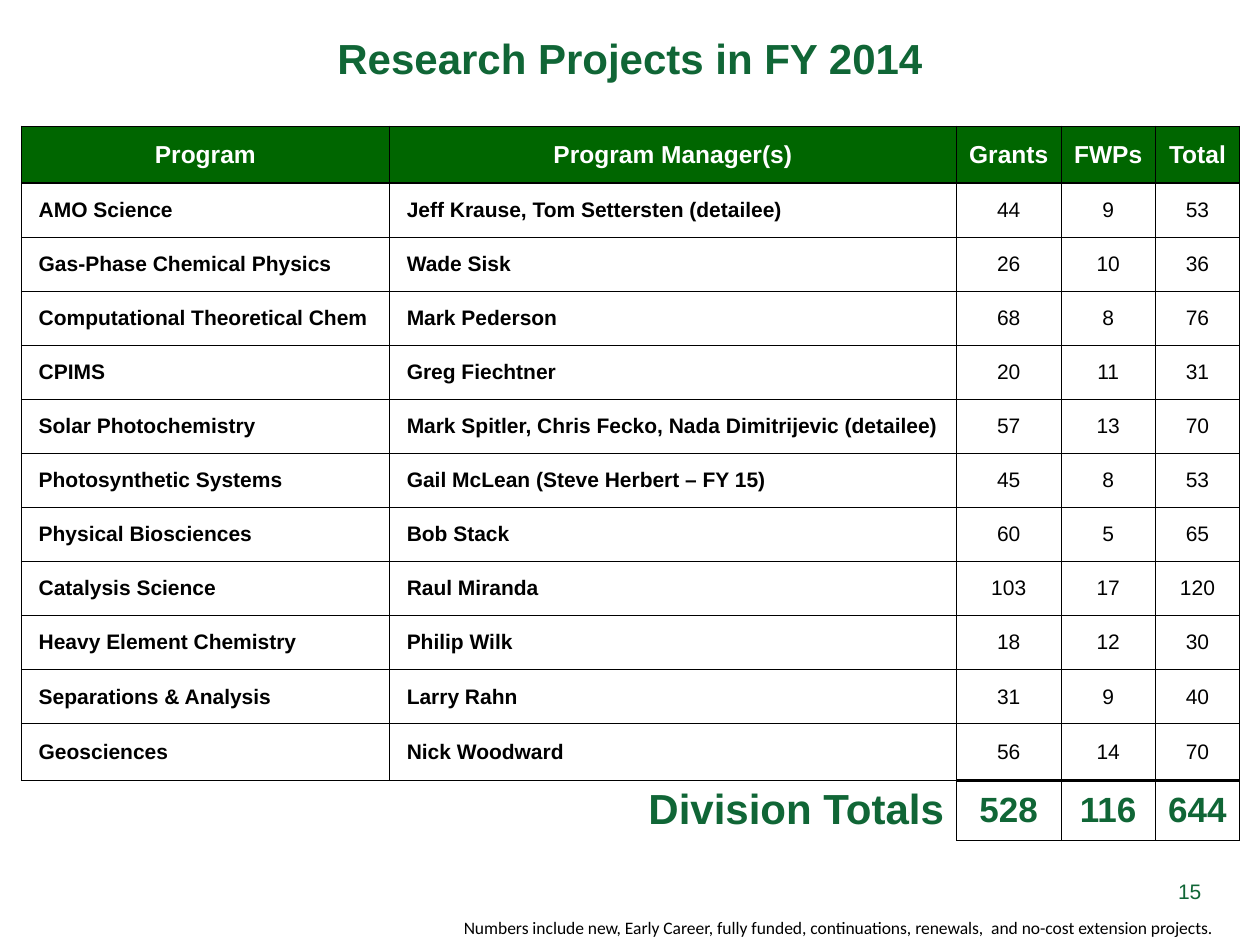
from lxml.etree import SubElement
from pptx import Presentation
from pptx.dml.color import RGBColor
from pptx.enum.text import MSO_ANCHOR as Anchor, MSO_AUTO_SIZE as AutoSize, PP_ALIGN as Align
from pptx.oxml.ns import qn
from pptx.util import Cm, Pt

COLORS = {"title": "106636", "header": "006600", "white": "FFFFFF", "black": "000000"}

HEADINGS = ["Program", "Program Manager(s)", "Grants", "FWPs", "Total"]
PROGRAMS = [
    ("AMO Science", "Jeff Krause, Tom Settersten (detailee)", 44, 9, 53),
    ("Gas-Phase Chemical Physics", "Wade Sisk", 26, 10, 36),
    ("Computational Theoretical Chem", "Mark Pederson", 68, 8, 76),
    ("CPIMS", "Greg Fiechtner", 20, 11, 31),
    ("Solar Photochemistry", "Mark Spitler, Chris Fecko, Nada Dimitrijevic (detailee)", 57, 13, 70),
    ("Photosynthetic Systems", "Gail McLean (Steve Herbert – FY 15)", 45, 8, 53),
    ("Physical Biosciences", "Bob Stack", 60, 5, 65),
    ("Catalysis Science", "Raul Miranda", 103, 17, 120),
    ("Heavy Element Chemistry", "Philip Wilk", 18, 12, 30),
    ("Separations & Analysis", "Larry Rahn", 31, 9, 40),
    ("Geosciences", "Nick Woodward", 56, 14, 70),
]
TOTALS = ("", "Division Totals", 528, 116, 644)

COLUMN_WIDTHS = [7.42, 11.43, 2.11, 1.9, 1.7]
ROW_HEIGHTS = [1.15] + [1.09] * (len(PROGRAMS) - 1) + [1.15, 1.17]


def set_font(para, size, color, bold=False, name="Arial"):
    font = para.font
    font.name, font.size, font.bold = name, Pt(size), bold
    font.color.rgb = RGBColor.from_string(COLORS[color])


def set_borders(cell, left=0.5, right=0.5, top=0.5, bottom=0.5):
    """Draw black cell edges of the given point widths; a width of 0 hides the edge."""
    properties = cell._tc.get_or_add_tcPr()
    for side, width in zip("LRTB", (left, right, top, bottom)):
        line = SubElement(properties, qn(f"a:ln{side}"), w=str(Pt(width)))
        if width:
            fill = SubElement(line, qn("a:solidFill"))
            SubElement(fill, qn("a:srgbClr"), val=COLORS["black"])
        else:
            SubElement(line, qn("a:noFill"))


def set_fill(cell, color=None):
    if color:
        cell.fill.solid()
        cell.fill.fore_color.rgb = RGBColor.from_string(COLORS[color])
    else:
        cell.fill.background()


def write_cell(cell, text, align=Align.CENTER, margin=0.0):
    """Put text in a vertically centred cell and return its paragraph."""
    cell.vertical_anchor = Anchor.MIDDLE
    cell.margin_left = cell.margin_right = Cm(margin)
    cell.margin_top = cell.margin_bottom = Cm(margin / 2)
    para = cell.text_frame.paragraphs[0]
    para.text, para.alignment = str(text), align
    return para


def fill_header(cells):
    for cell, heading in zip(cells, HEADINGS):
        set_borders(cell, bottom=1)
        set_fill(cell, "header")
        set_font(write_cell(cell, heading), 14, "white", bold=True)


def fill_program(cells, values, top, bottom):
    for column, (cell, value) in enumerate(zip(cells, values)):
        is_name = column < 2
        set_borders(cell, top=top, bottom=0.5 if is_name else bottom)
        set_fill(cell)
        para = write_cell(cell, value, Align.LEFT if is_name else Align.CENTER)
        if is_name:
            para._p.get_or_add_pPr().set("marL", str(Cm(0.35)))
        set_font(para, 12, "black", bold=is_name)


def fill_totals(cells):
    for column, (cell, value) in enumerate(zip(cells, TOTALS)):
        if column < 2:
            set_borders(cell, left=0, right=0.5 * column, bottom=0)
            set_fill(cell, "white")
            para = write_cell(cell, value, Align.RIGHT, margin=0.25)
            set_font(para, 24, "title", bold=True)
        else:
            set_borders(cell, top=2)
            set_fill(cell)
            set_font(write_cell(cell, value), 20, "title", bold=True)


def add_projects_table(page, left, top):
    frame = page.shapes.add_table(
        len(ROW_HEIGHTS), len(COLUMN_WIDTHS), Cm(left), Cm(top),
        Cm(sum(COLUMN_WIDTHS)), Cm(sum(ROW_HEIGHTS)))
    table = frame.table
    table.first_row = table.horz_banding = False
    for column, width in zip(table.columns, COLUMN_WIDTHS):
        column.width = Cm(width)
    for row, height in zip(table.rows, ROW_HEIGHTS):
        row.height = Cm(height)

    header, *body, totals = [row.cells for row in table.rows]
    fill_header(header)
    last = len(PROGRAMS) - 1
    for index, (cells, values) in enumerate(zip(body, PROGRAMS)):
        fill_program(cells, values, 0.5 if index else 1, 2 if index == last else 0.5)
    fill_totals(totals)


def add_title(page, left, top, width, height):
    title = page.shapes.title
    title.left, title.top, title.width, title.height = map(Cm, (left, top, width, height))
    title.text_frame.vertical_anchor = Anchor.MIDDLE
    para = title.text_frame.paragraphs[0]
    para.text, para.alignment = "Research Projects in FY 2014", Align.CENTER
    set_font(para, 24, "title", bold=True)


def add_note(page, left, top, width, height, text, wrap=True, **font):
    box = page.shapes.add_textbox(Cm(left), Cm(top), Cm(width), Cm(height))
    box.text_frame.word_wrap = wrap
    box.text_frame.auto_size = AutoSize.SHAPE_TO_FIT_TEXT
    para = box.text_frame.paragraphs[0]
    para.text = text
    set_font(para, **font)


def main():
    deck = Presentation()
    deck.slide_width, deck.slide_height = Cm(25.4), Cm(19.05)
    page = deck.slides.add_slide(deck.slide_layouts[5])
    add_title(page, 0, -0.43, 25.4, 3.18)
    add_projects_table(page, 0.43, 2.54)
    add_note(page, 9.1, 18.36, 16.5, 0.68,
             "Numbers include new, Early Career, fully funded, continuations, renewals,  "
             "and no-cost extension projects.",
             size=10, color="black", name="Calibri")
    add_note(page, 23.5, 17.58, 0.98, 0.77, "15", wrap=False, size=12, color="title")
    deck.save("out.pptx")


if __name__ == "__main__":
    main()
